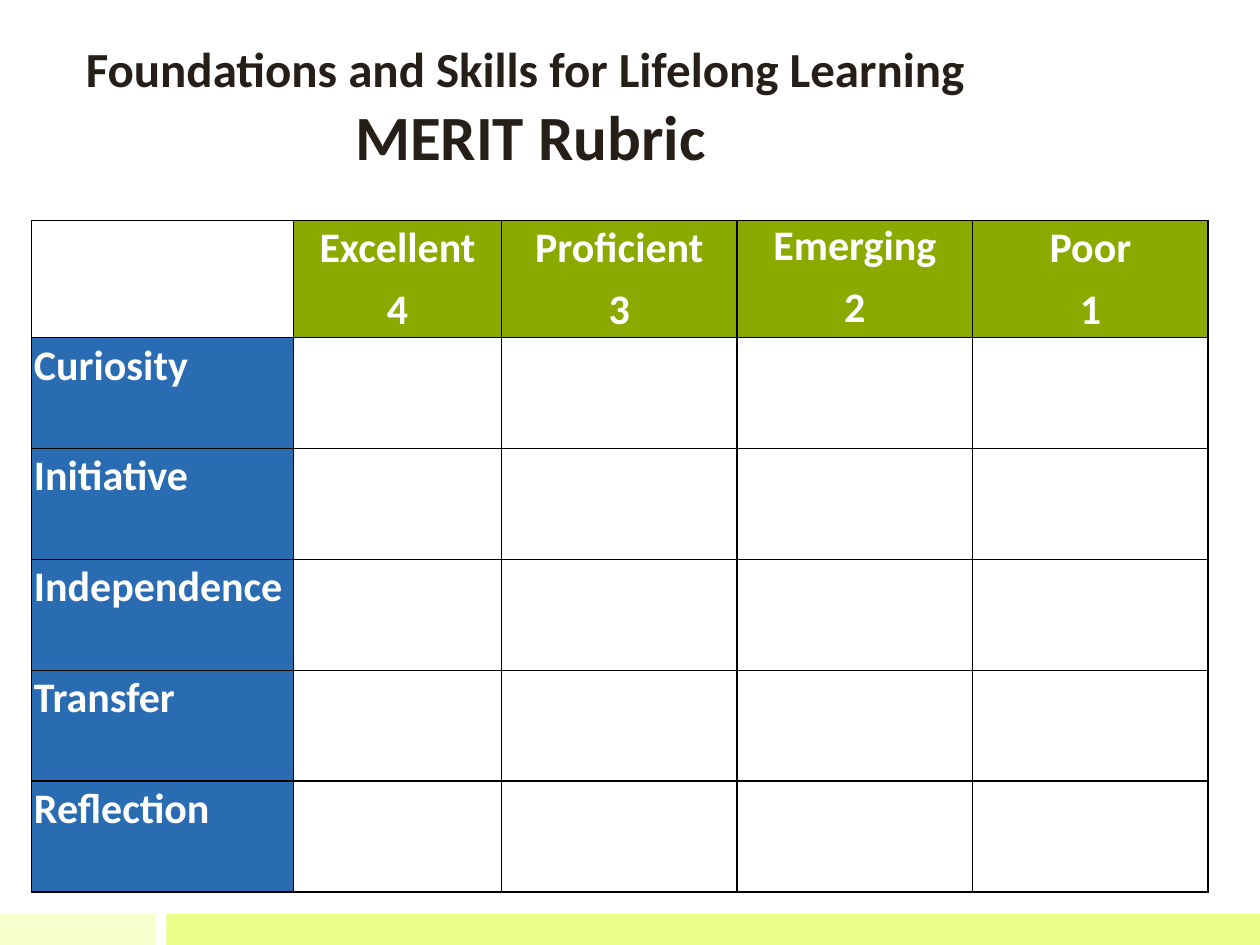
from lxml import etree
from pptx import Presentation
from pptx.dml.color import RGBColor
from pptx.enum.shapes import MSO_SHAPE as Shape
from pptx.enum.text import MSO_ANCHOR as Anchor, PP_ALIGN as Align
from pptx.oxml.ns import qn
from pptx.util import Inches, Pt

FONT = "Calibri"
DARK = RGBColor(0x26, 0x1F, 0x18)
WHITE = RGBColor(0xFF, 0xFF, 0xFF)
BLACK = RGBColor(0x00, 0x00, 0x00)
GREEN = RGBColor(0x8B, 0xAA, 0x00)
BLUE = RGBColor(0x2A, 0x6C, 0xB2)
PALE = RGBColor(0xF6, 0xFF, 0xCC)
LIME = RGBColor(0xE9, 0xFF, 0x88)

# Each level: label, score, cell margin in inches
LEVELS = [("Excellent", "4", 0.02), ("Proficient", "3", 0.02),
          ("Emerging", "2", 0), ("Poor", "1", 0.02)]
SKILLS = ["Curiosity", "Initiative", "Independence", "Transfer", "Reflection"]
COLS = [2.08, 1.65, 1.87, 1.87, 1.87]
HEAD, BODY = 0.93, 0.88


def add_run(para, text, size, color):
    run = para.add_run()
    run.text = text
    font = run.font
    font.name, font.size, font.bold = FONT, Pt(size), True
    font.color.rgb = color


def add_bar(slide, left, width, color):
    bar = slide.shapes.add_shape(Shape.RECTANGLE, Inches(left), Inches(7.25),
                                 Inches(width), Inches(0.25))
    bar.shadow.inherit = False
    bar.fill.solid()
    bar.fill.fore_color.rgb = color
    bar.line.fill.background()


def add_title(slide):
    box = slide.shapes.add_textbox(Inches(0.25), Inches(0.17),
                                   Inches(7.92), Inches(1.25))
    frame = box.text_frame
    frame.word_wrap = True
    frame.vertical_anchor = Anchor.BOTTOM
    para = frame.paragraphs[0]
    para.alignment = Align.CENTER
    add_run(para, "Foundations and Skills for Lifelong Learning ", 28, DARK)
    para.add_line_break()
    add_run(para, "MERIT Rubric", 36, DARK)


def set_edges(cell):
    props = cell._tc.get_or_add_tcPr()
    for i, side in enumerate(("lnL", "lnR", "lnT", "lnB")):
        line = etree.Element(qn("a:" + side), w=str(Pt(1)))
        fill = etree.SubElement(line, qn("a:solidFill"))
        etree.SubElement(fill, qn("a:srgbClr"), val=str(BLACK))
        props.insert(i, line)


def fill_cell(cell, lines, color, margin=0.02, align=Align.LEFT, after=0):
    cell.fill.solid()
    cell.fill.fore_color.rgb = color
    cell.margin_left = cell.margin_right = Inches(margin)
    cell.margin_top = cell.margin_bottom = Inches(margin)
    frame = cell.text_frame
    for i, text in enumerate(lines):
        para = frame.add_paragraph() if i else frame.paragraphs[0]
        para.alignment = align
        para.space_after = Pt(after)
        add_run(para, text, 24, WHITE)


def add_rubric(slide):
    rows = [HEAD] + [BODY] * len(SKILLS)
    frame = slide.shapes.add_table(len(rows), len(COLS), Inches(0.25),
                                   Inches(1.75), Inches(sum(COLS)),
                                   Inches(sum(rows)))
    table = frame.table
    table.first_row = table.horz_banding = False
    for col, width in zip(table.columns, COLS):
        col.width = Inches(width)
    for row, height in zip(table.rows, rows):
        row.height = Inches(height)

    # Plain grid
    for cell in table.iter_cells():
        cell.fill.background()
        set_edges(cell)

    # Level headings and skill names
    for i, (name, score, margin) in enumerate(LEVELS, 1):
        fill_cell(table.cell(0, i), [name, score], GREEN, margin,
                  Align.CENTER, 6)
    for i, skill in enumerate(SKILLS, 1):
        fill_cell(table.cell(i, 0), [skill], BLUE)


def main():
    deck = Presentation()
    deck.slide_width, deck.slide_height = Inches(10), Inches(7.5)
    slide = deck.slides.add_slide(deck.slide_layouts[6])

    # Footer bars
    add_bar(slide, 0, 1.23, PALE)
    add_bar(slide, 1.32, 8.68, LIME)

    add_title(slide)
    add_rubric(slide)
    deck.save("out.pptx")


if __name__ == "__main__":
    main()
